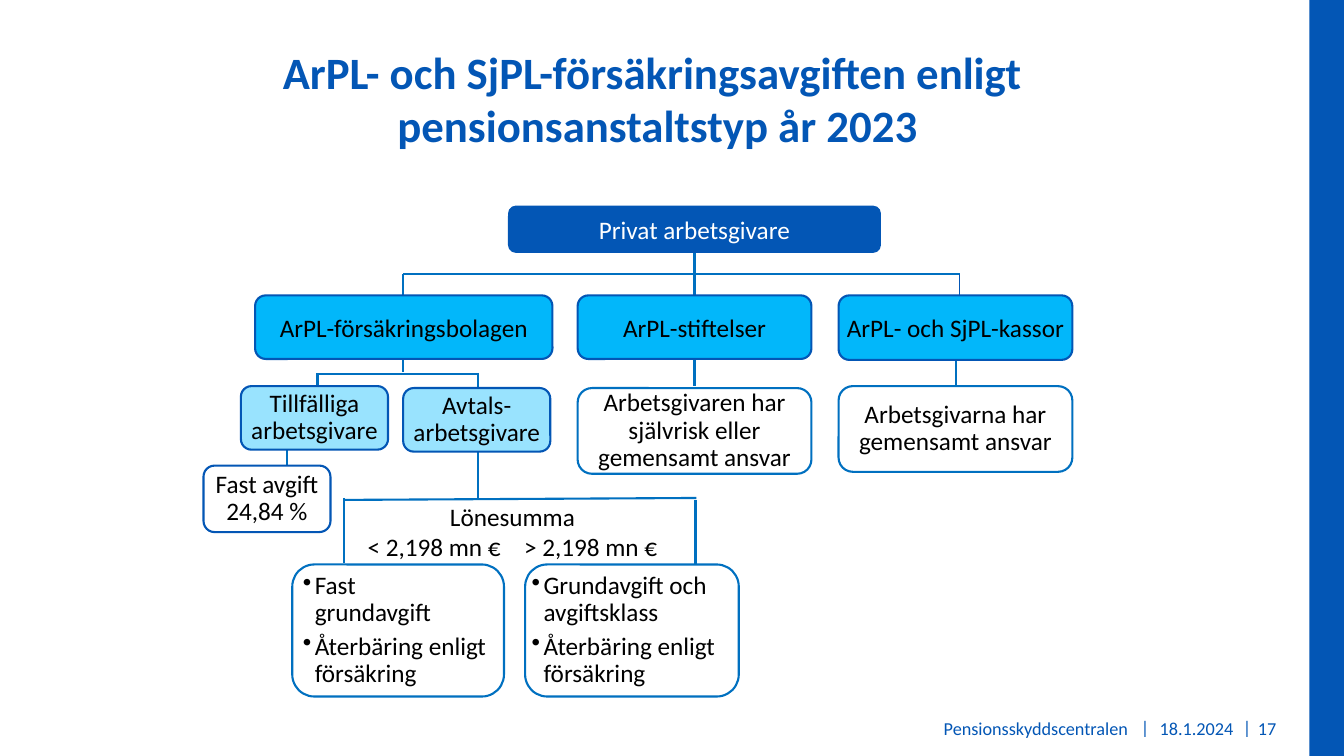
"""Build the slide on pension insurance contributions by type of pension provider."""

from dataclasses import dataclass
from typing import Any, NamedTuple, Optional

from lxml import etree
from pptx import Presentation
from pptx import util as u
from pptx.dml import color
from pptx.enum import shapes, text
from pptx.oxml import ns

Insets = tuple[float, float, float, float]


@dataclass(frozen=True)
class Theme:
    font: str = "Calibri"
    title_size: float = 32
    body_size: float = 18
    footer_size: float = 13
    line_width: float = 1.5
    thin_width: float = 1.25
    navy: str = "0356B5"
    blue: str = "0070C0"
    cyan: str = "02B7FA"
    pale: str = "99E3FE"
    white: str = "FFFFFF"
    black: str = "000000"


THEME = Theme()
CENTER = text.PP_ALIGN.CENTER
LEFT = text.PP_ALIGN.LEFT
RIGHT = text.PP_ALIGN.RIGHT
MIDDLE = text.MSO_ANCHOR.MIDDLE
TOP = text.MSO_ANCHOR.TOP
NORMAL: Insets = (7.2, 3.6, 7.2, 3.6)
NARROW: Insets = (2.9, 3.6, 2.9, 3.6)
BULLET_INDENT = 8.6
BULLET_GAP = 4.4
WAGE_TABS = (78.5, 190.3)


@dataclass(frozen=True)
class Label:
    wording: str
    size: float = THEME.body_size
    ink: str = THEME.black
    bold: bool = False
    align: text.PP_ALIGN = CENTER
    anchor: text.MSO_ANCHOR = MIDDLE
    insets: Insets = NORMAL
    spacing: float = 1.0
    bullets: bool = False
    wrap: bool = True


class Box(NamedTuple):
    left: float
    top: float
    width: float
    height: float
    label: Optional[Label] = None
    fill: Optional[str] = None
    edge: Optional[str] = None
    outline: shapes.MSO_SHAPE = shapes.MSO_SHAPE.ROUNDED_RECTANGLE


class Link(NamedTuple):
    x1: float
    y1: float
    x2: float
    y2: float
    ink: str = THEME.blue
    width: float = THEME.line_width


def apply(target: Any, values: dict[str, Any]) -> None:
    """Set each named attribute on the target."""
    for name, value in values.items():
        setattr(target, name, value)


def add_bullet(para: Any) -> None:
    """Give a paragraph a hanging round bullet."""
    props = para._p.get_or_add_pPr()
    props.set("marL", str(u.Pt(BULLET_INDENT)))
    props.set("indent", str(-u.Pt(BULLET_INDENT)))
    etree.SubElement(props, ns.qn("a:buChar"), char="•")


def add_tabs(para: Any) -> None:
    """Give a paragraph the centred stops of the two wage limits."""
    stops = etree.SubElement(para._p.get_or_add_pPr(), ns.qn("a:tabLst"))
    for position in WAGE_TABS:
        etree.SubElement(stops, ns.qn("a:tab"), pos=str(u.Pt(position)), algn="ctr")


def write(frame: Any, label: Label) -> None:
    """Fill a text frame with the paragraphs of a label."""
    sides = ("margin_left", "margin_top", "margin_right", "margin_bottom")
    apply(frame, {side: u.Pt(inset) for side, inset in zip(sides, label.insets)})
    apply(frame, {"word_wrap": label.wrap, "vertical_anchor": label.anchor})
    for index, line in enumerate(label.wording.split("\n")):
        para = frame.add_paragraph() if index else frame.paragraphs[0]
        tabbed = "\t" in line
        if label.bullets:
            add_bullet(para)
        if tabbed:
            add_tabs(para)
        para.text = line
        apply(para, {"alignment": LEFT if tabbed else label.align,
                     "line_spacing": label.spacing})
        if label.bullets and index:
            para.space_before = u.Pt(BULLET_GAP)
        for span in para.runs:
            apply(span.font, {"name": THEME.font, "size": u.Pt(label.size), "bold": label.bold})
            span.font.color.rgb = color.RGBColor.from_string(label.ink)


def draw_box(page: Any, box: Box) -> None:
    """Draw a filled shape, or a text box when there is no fill."""
    place = [u.Pt(value) for value in box[:4]]
    if box.fill is None:
        shape = page.shapes.add_textbox(*place)
    else:
        shape = page.shapes.add_shape(box.outline, *place)
        shape.shadow.inherit = False
        shape.fill.solid()
        shape.fill.fore_color.rgb = color.RGBColor.from_string(box.fill)
        if box.edge is None:
            shape.line.fill.background()
        else:
            shape.line.color.rgb = color.RGBColor.from_string(box.edge)
            shape.line.width = u.Pt(THEME.line_width)
    if box.label is not None:
        write(shape.text_frame, box.label)


def draw_link(page: Any, link: Link) -> None:
    """Draw a straight line without a shadow."""
    ends = [u.Pt(value) for value in link[:4]]
    line = page.shapes.add_connector(shapes.MSO_CONNECTOR.STRAIGHT, *ends)
    line.line.color.rgb = color.RGBColor.from_string(link.ink)
    line.line.width = u.Pt(link.width)
    etree.SubElement(line.element.spPr, ns.qn("a:effectLst"))


def footer(wording: str, align: text.PP_ALIGN = LEFT, **options: Any) -> Label:
    """Return a label in the footer style."""
    return Label(wording, THEME.footer_size, THEME.navy, align=align, **options)


def tight(wording: str, insets: Insets = NARROW, **options: Any) -> Label:
    """Return a label with reduced line spacing."""
    return Label(wording, insets=insets, spacing=0.9, **options)


LINKS = [
    Link(288, 195.8, 685.4, 195.8),
    Link(288, 211, 288, 195.8),
    Link(685.4, 211, 685.4, 195.8, THEME.navy, THEME.thin_width),
    Link(496.1, 180.7, 496.1, 211),
    Link(288, 265.7, 288, 257),
    Link(226.8, 267.1, 341.3, 267.1),
    Link(226.8, 276.5, 226.8, 266.4),
    Link(341.3, 266.4, 341.3, 276.5),
    Link(496.1, 256.3, 496.1, 275.8),
    Link(682.6, 257, 682.6, 275.8),
    Link(205.2, 332, 205.2, 320.4),
    Link(341.3, 321.1, 341.3, 357.1),
    Link(245.5, 357.1, 497.5, 355.7),
    Link(245.5, 355.7, 245.5, 402.5),
    Link(496.8, 357.1, 496.8, 404.6),
]

BOXES = [
    Box(935.3, 0, 24.7, 540, fill=THEME.navy, outline=shapes.MSO_SHAPE.RECTANGLE),
    Box(2.9, 28.1, 933.8, 105.1, Label(
        "ArPL- och SjPL-försäkringsavgiften enligt \vpensionsanstaltstyp år 2023",
        THEME.title_size, THEME.navy, bold=True, anchor=TOP)),
    Box(350.6, 507.6, 460.8, 25.2,
        footer("Pensionsskyddscentralen", RIGHT, insets=(2.9, 3.6, 5.8, 3.6))),
    Box(820.1, 507.6, 69.1, 25.2, footer("18.1.2024", CENTER, insets=(0, 3.6, 0, 3.6))),
    Box(891.4, 507.6, 31.7, 25.2, footer("17")),
    *(Box(left, 508.3, 20.9, 25.2, footer("|", anchor=TOP, wrap=False)) for left in (807.8, 880.6)),
    Box(362.9, 146.9, 266.4, 33.8, Label("Privat arbetsgivare", ink=THEME.white), THEME.navy),
    Box(182.2, 211, 212.4, 45.4, Label("ArPL-försäkringsbolagen"), THEME.cyan, THEME.navy),
    Box(412.6, 211, 167, 45.4, Label("ArPL-stiftelser"), THEME.cyan, THEME.navy),
    Box(599, 211, 167, 46.1, Label("ArPL- och SjPL-kassor", insets=NARROW), THEME.cyan, THEME.navy),
    Box(172.1, 275.8, 105.1, 45.4, tight("Tillfälliga\narbetsgivare"), THEME.pale, THEME.navy),
    Box(288, 277.2, 105.1, 45.4, tight("Avtals-\narbetsgivare"), THEME.pale, THEME.navy),
    Box(412.6, 277.2, 167, 61.2, tight(
        "Arbetsgivaren har självrisk eller gemensamt ansvar", NORMAL), THEME.white, THEME.blue),
    Box(599, 275.8, 167, 61.2, tight(
        "Arbetsgivarna har gemensamt ansvar", NORMAL), THEME.white, THEME.blue),
    Box(145.4, 332.6, 90.7, 47.5, tight("Fast avgift\n24,84 %"), THEME.white, THEME.navy),
    Box(224.6, 354.2, 283, 51.1, Label("Lönesumma\n\t< 2,198 mn €\t> 2,198 mn €", anchor=TOP)),
    Box(208.8, 403.2, 151.2, 94.3, tight(
        "Fast\vgrundavgift\nÅterbäring enligt försäkring", (2.9, 0, 2.9, 0),
        align=LEFT, bullets=True), THEME.white, THEME.blue),
    Box(375.1, 403.2, 152.6, 94.3, tight(
        "Grundavgift och avgiftsklass\nÅterbäring enligt försäkring", (0, 0, 0, 0),
        align=LEFT, bullets=True), THEME.white, THEME.blue),
]


def main() -> None:
    """Draw the slide and save the deck."""
    deck = Presentation()
    apply(deck, {"slide_width": u.Pt(960), "slide_height": u.Pt(540)})
    page = deck.slides.add_slide(deck.slide_layouts[6])
    for link in LINKS:
        draw_link(page, link)
    for box in BOXES:
        draw_box(page, box)
    deck.save("out.pptx")


if __name__ == "__main__":
    main()
